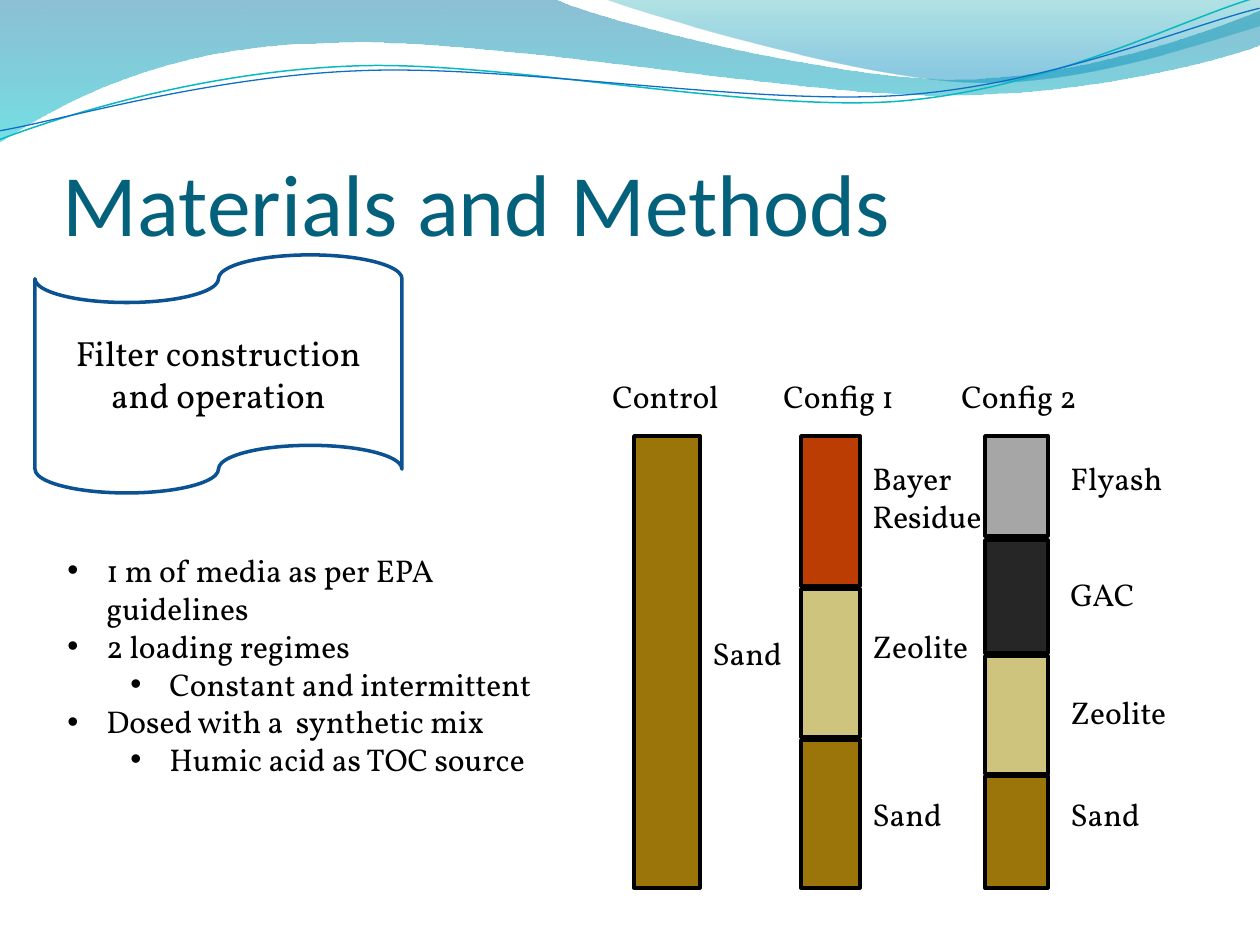
"""Build the Materials and Methods slide with its wave header and filter columns."""
from lxml.etree import SubElement
from pptx import Presentation
from pptx.dml.color import RGBColor
from pptx.enum.shapes import MSO_SHAPE as SHAPE
from pptx.enum.text import MSO_ANCHOR as ANCHOR, PP_ALIGN as ALIGN
from pptx.oxml.ns import qn
from pptx.util import Pt

PX = 914400 / 126
rgb = RGBColor.from_string


def emu(*lengths):
    return [round(length * PX) for length in lengths]


def write(frame, text, size=18, font="Vollkorn", color="000000"):
    frame.word_wrap = True
    frame.text = text
    for paragraph in frame.paragraphs:
        for run in paragraph.runs:
            run.font.size = Pt(size)
            run.font.name = font
            run.font.color.rgb = rgb(color)


prs = Presentation()
prs.slide_width, prs.slide_height = emu(1260, 945)
shapes = prs.slides.add_slide(prs.slide_layouts[6]).shapes

waves = [
    ([(0, 0), (554, -1), (600, 21, 837, 79, 955, 79), (1074, 79, 1207, 33, 1260, 11),
      (1261, 45), (1237, 55, 1096, 96, 940, 95), (784, 95, 481, 35, 324, 43),
      (163, 45, 58, 105, -1, 142), (0, 0)], [("0074A1", 45, 0), ("00C6CF", 55, 1)], None),
    ([(604, -1), (642, 14, 859, 78, 969, 82), (1079, 87, 1211, 40, 1260, 26),
      (1260, 0), (604, -1)], [("00A1A9", 30, 0), ("008BBF", 45, 0.8)], None),
    ([(-3, 110), (58, 90, 199, 52, 350, 53), (499, 53, 745, 118, 896, 114),
      (1049, 109, 1184, 45, 1260, 27)], None, ("0AB8BF", 0.85)),
    ([(-2, 101), (57, 94, 207, 57, 357, 58), (509, 58, 751, 112, 902, 108),
      (1052, 104, 1189, 52, 1262, 38)], None, ("0F6FC6", 0.75)),
]
for segments, stops, stroke in waves:
    builder = shapes.build_freeform(*emu(*segments[0]))
    for segment in segments[1:]:
        builder.add_line_segments([emu(*segment[i:i + 2]) for i in range(0, len(segment), 2)],
                                  close=False)
    wave = builder.convert_to_shape()
    wave.shadow.inherit = False
    lines = iter(list(wave.element.iter(qn("a:lnTo"))))
    for segment in segments[1:]:
        first = next(lines)
        if len(segment) == 6:
            first.tag = qn("a:cubicBezTo")
            for line in (next(lines), next(lines)):
                first.append(line[0])
                line.getparent().remove(line)
    if stops:
        SubElement(next(wave.element.iter(qn("a:path"))), qn("a:close"))
        wave.line.fill.background()
        wave.fill.gradient()
        wave.fill.gradient_angle = 270
        for stop, (color, alpha, position) in zip(wave.fill.gradient_stops, stops):
            stop.color.rgb = rgb(color)
            stop.position = position
        for tint, (color, alpha, position) in zip(wave.element.spPr.iter(qn("a:srgbClr")), stops):
            SubElement(tint, qn("a:alpha")).set("val", str(alpha * 1000))
    else:
        wave.rotation = 357.3
        wave.fill.background()
        wave.line.color.rgb = rgb(stroke[0])
        wave.line.width = Pt(stroke[1])

title = shapes.add_textbox(*emu(63, 97, 1144, 157)).text_frame
write(title, "Materials and Methods", 50, "Calibri", "04617B")
title.vertical_anchor = ANCHOR.BOTTOM
title.margin_left = title.margin_right = title.margin_bottom = 0

banner = shapes.add_shape(SHAPE.FLOWCHART_PUNCHED_TAPE, *emu(35, 255, 367, 238))
banner.shadow.inherit = False
banner.fill.solid()
banner.fill.fore_color.rgb = rgb("FFFFFF")
banner.line.color.rgb = rgb("0B5292")
banner.line.width = Pt(2)
write(banner.text_frame, "Filter construction and operation", 20)
banner.text_frame.vertical_anchor = ANCHOR.MIDDLE
banner.text_frame.paragraphs[0].alignment = ALIGN.CENTER

SAND, ZEOLITE = "9B7509", "CEC47E"
columns = [
    ("Control", 600, 634, 66, 700, [("Sand", SAND, 436, 452, 628)]),
    ("Config 1", 771, 801, 59, 860, [
        ("Bayer\nResidue", "BC3D04", 436, 150, 453),
        ("Zeolite", ZEOLITE, 589, 148, 621),
        ("Sand", SAND, 740, 148, 789)]),
    ("Config 2", 949, 985, 63, 1058, [
        ("Flyash", "A6A6A6", 436, 100, 453),
        ("GAC", "262626", 540, 113, 569),
        ("Zeolite", ZEOLITE, 656, 118, 687),
        ("Sand", SAND, 776, 112, 789)]),
]
for heading, heading_x, column_x, width, label_x, layers in columns:
    labels = [(heading, heading_x, 371)]
    for material, color, top, height, label_y in layers:
        layer = shapes.add_shape(SHAPE.RECTANGLE, *emu(column_x, top, width, height))
        layer.shadow.inherit = False
        layer.fill.solid()
        layer.fill.fore_color.rgb = rgb(color)
        layer.line.color.rgb = rgb("000000")
        layer.line.width = Pt(2)
        labels.append((material, label_x, label_y))
    for text, left, top in labels:
        height = 50 + 39 * text.count("\n")
        write(shapes.add_textbox(*emu(left, top, 179, height)).text_frame, text)

methods = [
    ("1 m of media as per EPA guidelines", 0),
    ("2 loading regimes", 0),
    ("Constant and intermittent", 1),
    ("Dosed with a  synthetic mix", 0),
    ("Humic acid as TOC source", 1),
]
procedure = shapes.add_textbox(*emu(55, 545, 520, 280)).text_frame
write(procedure, "\n".join(text for text, level in methods))
for paragraph, (text, level) in zip(procedure.paragraphs, methods):
    paragraph.level = level
    indent, = emu(39)
    margin, = emu(39 + 63 * level)
    properties = paragraph._p.get_or_add_pPr()
    properties.set("marL", str(margin))
    properties.set("indent", str(-indent))
    SubElement(properties, qn("a:buFont")).set("typeface", "Arial")
    SubElement(properties, qn("a:buChar")).set("char", "•")

prs.save("out.pptx")
